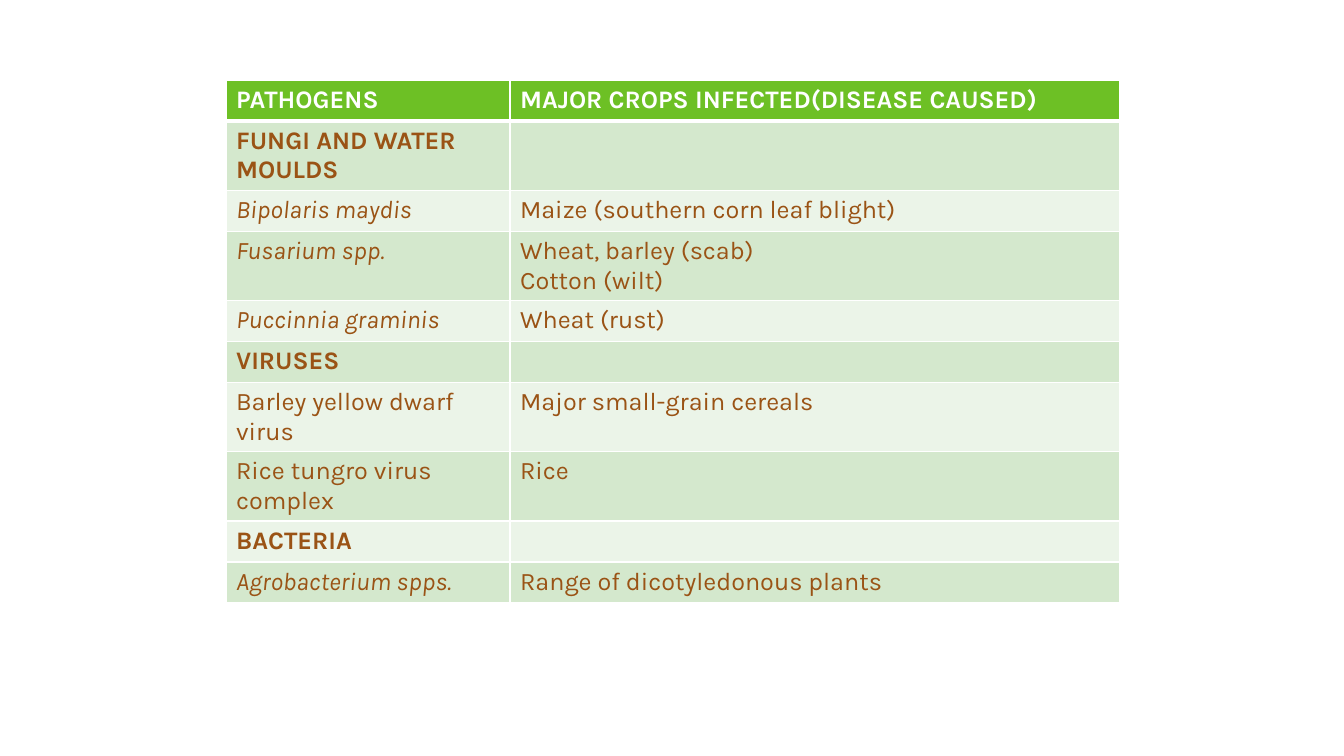
from dataclasses import dataclass

import pptx
import pptx.dml.color
import pptx.oxml
import pptx.oxml.ns
import pptx.util

HEADER, GROUP, SPECIES, VIRUS = "header", "group", "species", "virus"

# (kind, pathogen, crops infected)
PATHOGENS = [
    (HEADER, "PATHOGENS", "MAJOR CROPS INFECTED(DISEASE CAUSED)"),
    (GROUP, "FUNGI AND WATER MOULDS", ""),
    (SPECIES, "Bipolaris maydis", "Maize (southern corn leaf blight)"),
    (SPECIES, "Fusarium spp.", "Wheat, barley (scab)\nCotton (wilt)"),
    (SPECIES, "Puccinnia graminis", "Wheat (rust)"),
    (GROUP, "VIRUSES", ""),
    (VIRUS, "Barley yellow dwarf virus", "Major small-grain cereals"),
    (VIRUS, "Rice tungro virus complex", "Rice"),
    (GROUP, "BACTERIA", ""),
    (SPECIES, "Agrobacterium spps.", "Range of dicotyledonous plants"),
]

SLIDE_SIZE = (1344, 756)
TABLE_LEFT, TABLE_TOP = 226, 80
COLUMN_WIDTHS = (284, 610)
ROW_HEIGHT = 41


@dataclass(frozen=True)
class Theme:
    font: str = "Karla"
    size: int = 18
    header_text: str = "FFFFFF"
    body_text: str = "9A5315"
    header_fill: str = "6DC025"
    bands: tuple = ("D4E8CD", "EBF4E8")
    border: str = "FFFFFF"
    thin: int = 1
    thick: int = 3


THEME = Theme()


def px(length):
    return pptx.util.Emu(round(length * 914400 / 100.8))


def rgb(value):
    return pptx.dml.color.RGBColor.from_string(value)


def set_borders(cell, row_index):
    """Rule the cell thinly, with a thick line between header and body."""
    widths = {
        "lnL": THEME.thin,
        "lnR": THEME.thin,
        "lnT": THEME.thick if row_index == 1 else THEME.thin,
        "lnB": THEME.thick if row_index == 0 else THEME.thin,
    }
    properties = cell._tc.get_or_add_tcPr()
    for side, width in widths.items():
        properties.append(pptx.oxml.parse_xml(
            f'<a:{side} {pptx.oxml.ns.nsdecls("a")} w="{pptx.util.Pt(width)}">'
            f'<a:solidFill><a:srgbClr val="{THEME.border}"/></a:solidFill>'
            f'</a:{side}>'))


def fill_cell(cell, text, row_index, kind, is_pathogen):
    set_borders(cell, row_index)
    is_header = kind == HEADER
    band = THEME.bands[(row_index - 1) % 2]
    cell.fill.solid()
    cell.fill.fore_color.rgb = rgb(THEME.header_fill if is_header else band)
    cell.text_frame.text = text
    for paragraph in cell.text_frame.paragraphs:
        for run in paragraph.runs:
            run.font.name = THEME.font
            run.font.size = pptx.util.Pt(THEME.size)
            run.font.bold = kind in (HEADER, GROUP)
            run.font.italic = kind == SPECIES and is_pathogen
            run.font.color.rgb = rgb(
                THEME.header_text if is_header else THEME.body_text)


def main():
    presentation = pptx.Presentation()
    presentation.slide_width, presentation.slide_height = map(px, SLIDE_SIZE)
    slide = presentation.slides.add_slide(presentation.slide_layouts[6])

    table = slide.shapes.add_table(
        len(PATHOGENS), len(COLUMN_WIDTHS), px(TABLE_LEFT), px(TABLE_TOP),
        px(sum(COLUMN_WIDTHS)), px(ROW_HEIGHT * len(PATHOGENS))).table
    for column, width in zip(table.columns, COLUMN_WIDTHS):
        column.width = px(width)
    for row_index, (kind, *texts) in enumerate(PATHOGENS):
        table.rows[row_index].height = px(ROW_HEIGHT)
        for column_index, text in enumerate(texts):
            fill_cell(table.cell(row_index, column_index), text, row_index,
                      kind, column_index == 0)

    presentation.save("out.pptx")


if __name__ == "__main__":
    main()
